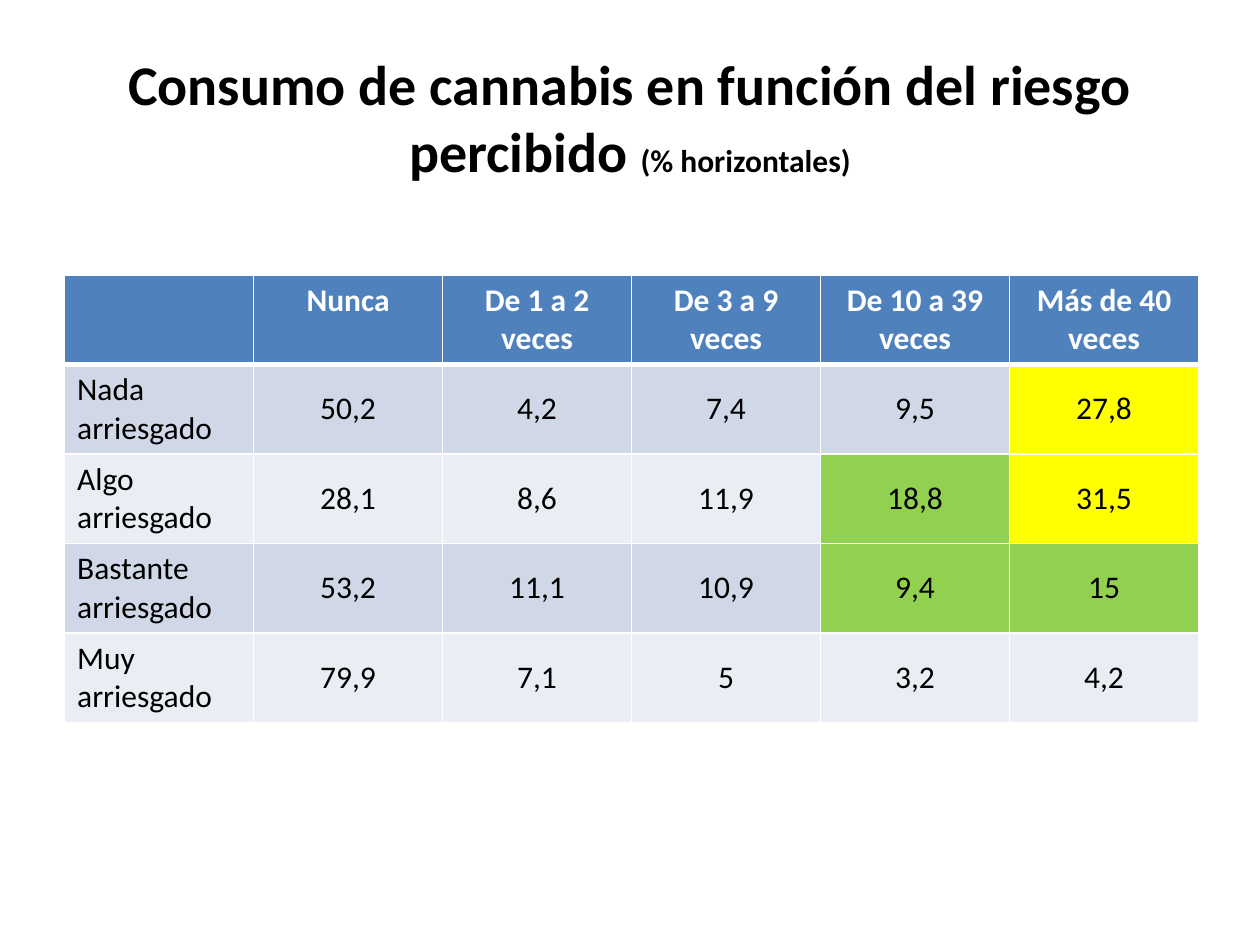
from lxml import etree
from pptx import Presentation
from pptx.dml.color import RGBColor
from pptx.enum.text import MSO_ANCHOR, PP_ALIGN
from pptx.oxml.ns import qn
from pptx.util import Pt

LEFT, CENTER = PP_ALIGN.LEFT, PP_ALIGN.CENTER
TOP, MIDDLE = MSO_ANCHOR.TOP, MSO_ANCHOR.MIDDLE

BLACK = RGBColor(0x00, 0x00, 0x00)
WHITE = RGBColor(0xFF, 0xFF, 0xFF)
BLUE = RGBColor(0x4F, 0x81, 0xBD)
BANDS = (RGBColor(0xD0, 0xD8, 0xE8), RGBColor(0xE9, 0xED, 0xF4))
YELLOW = RGBColor(0xFF, 0xFF, 0x00)
GREEN = RGBColor(0x92, 0xD0, 0x50)

FONT = "Calibri"
COLUMN_WIDTH = Pt(108)
ROW_HEIGHT = Pt(50.4)

ROWS = (
    ("", "Nunca", "De 1 a 2 veces", "De 3 a 9 veces", "De 10 a 39 veces", "Más de 40 veces"),
    ("Nada arriesgado", "50,2", "4,2", "7,4", "9,5", "27,8"),
    ("Algo arriesgado", "28,1", "8,6", "11,9", "18,8", "31,5"),
    ("Bastante arriesgado", "53,2", "11,1", "10,9", "9,4", "15"),
    ("Muy arriesgado", "79,9", "7,1", "5", "3,2", "4,2"),
)
HIGHLIGHTS = {(1, 5): YELLOW, (2, 5): YELLOW, (2, 4): GREEN, (3, 4): GREEN, (3, 5): GREEN}


def style_font(font, size, color, bold):
    """Apply the slide font with a size, colour and weight."""
    font.name = FONT
    font.size = Pt(size)
    font.color.rgb = color
    font.bold = bold


def add_title(page):
    """Fill the title placeholder with the heading and its smaller note."""
    title = page.shapes.title
    title.left, title.top, title.width, title.height = Pt(36), Pt(21.6), Pt(648), Pt(90)
    title.text_frame.vertical_anchor = MIDDLE
    para = title.text_frame.paragraphs[0]
    para.alignment = CENTER
    style_font(para.font, 32, BLACK, True)
    para.add_run().text = "Consumo de cannabis en función del riesgo percibido "
    note = para.add_run()
    note.text = "(% horizontales)"
    note.font.size = Pt(18)


def add_borders(cell, widths):
    """Draw white cell borders with the given width in points for each side."""
    properties = cell._tc.get_or_add_tcPr()
    for side, width in widths.items():
        line = etree.SubElement(properties, qn(f"a:ln{side}"), w=str(Pt(width)))
        fill = etree.SubElement(line, qn("a:solidFill"))
        etree.SubElement(fill, qn("a:srgbClr"), val=str(WHITE))


def fill_cell(cell, text, row, column):
    """Write and format one cell according to its place in the table."""
    header = row == 0
    add_borders(cell, {"L": 1, "R": 1, "T": 3 if row == 1 else 1, "B": 3 if header else 1})
    cell.fill.solid()
    band = BLUE if header else BANDS[(row - 1) % 2]
    cell.fill.fore_color.rgb = HIGHLIGHTS.get((row, column), band)
    cell.vertical_anchor = TOP if header or column == 0 else MIDDLE
    cell.text = text
    para = cell.text_frame.paragraphs[0]
    para.alignment = LEFT if column == 0 else CENTER
    style_font(para.font, 18, WHITE if header else BLACK, header)


def add_risk_table(page):
    """Add the table of cannabis use by perceived risk."""
    row_count, column_count = len(ROWS), len(ROWS[0])
    table = page.shapes.add_table(
        row_count, column_count, Pt(36.9), Pt(157),
        COLUMN_WIDTH * column_count, ROW_HEIGHT * row_count,
    ).table
    for row, texts in enumerate(ROWS):
        for column, text in enumerate(texts):
            fill_cell(table.cell(row, column), text, row, column)


def main():
    """Build the slide and save the deck."""
    deck = Presentation()
    deck.slide_width, deck.slide_height = Pt(720), Pt(540)
    page = deck.slides.add_slide(deck.slide_layouts.get_by_name("Title Only"))
    add_title(page)
    add_risk_table(page)
    deck.save("out.pptx")


if __name__ == "__main__":
    main()
